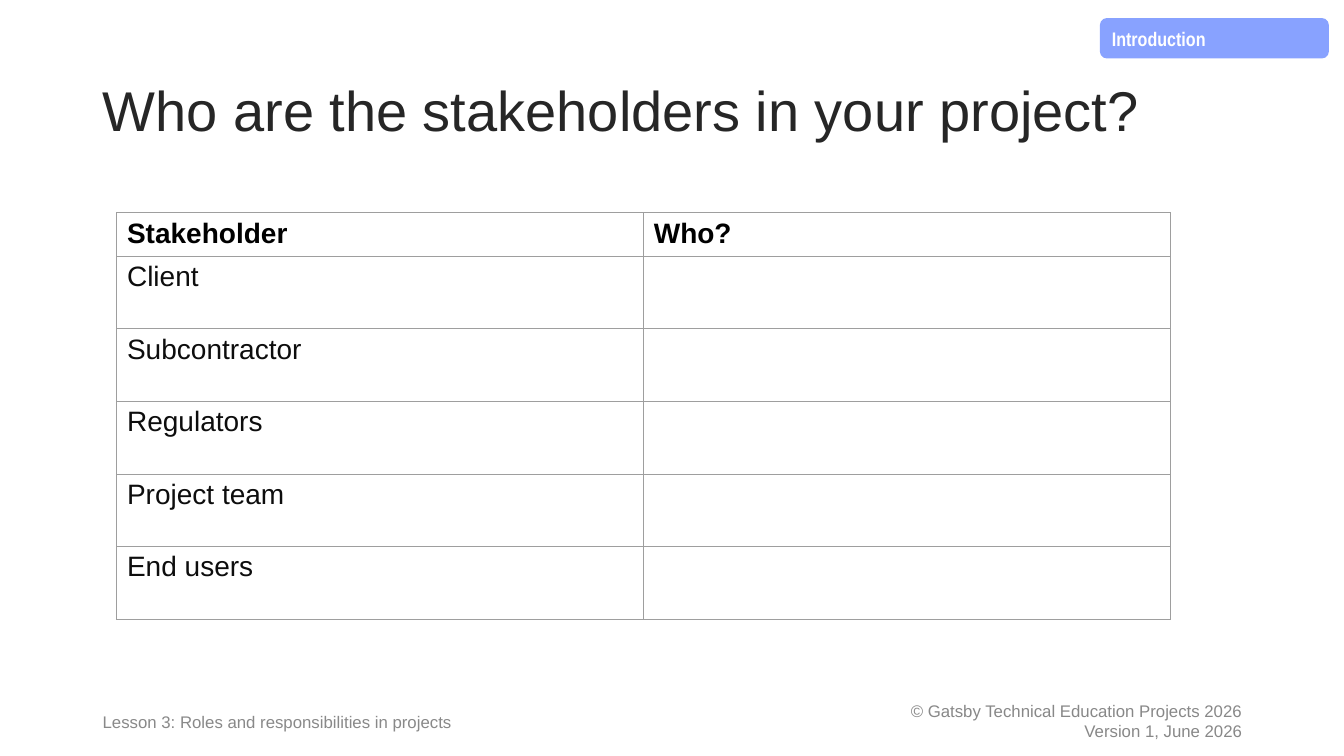
from lxml.etree import SubElement
from pptx import Presentation
from pptx.dml.color import RGBColor
from pptx.enum.shapes import MSO_SHAPE
from pptx.enum.text import MSO_ANCHOR, PP_ALIGN
from pptx.oxml.ns import qn
from pptx.util import Inches, Pt

COLORS = {
    "title": "262626",
    "head": "000000",
    "body": "0D0D0D",
    "rule": "9E9E9E",
    "tag": "88A2FF",
    "white": "FFFFFF",
    "legal": "888888",
    "lesson": "898989",
}
PEOPLE = ["Client", "Subcontractor", "Regulators", "Project team", "End users"]


def color(name):
    return RGBColor.from_string(COLORS[name])


def write(frame, lines, size, tint, bold=False, font="Arial",
          align=PP_ALIGN.LEFT, space=1.0):
    for i, line in enumerate(lines):
        para = frame.add_paragraph() if i else frame.paragraphs[0]
        para.alignment = align
        para.line_spacing = space
        run = para.add_run()
        run.text = line
        run.font.name = font
        run.font.size = Pt(size)
        run.font.bold = bold
        run.font.color.rgb = color(tint)


def add_text(slide, box, lines, size, tint, **style):
    frame = slide.shapes.add_textbox(*map(Inches, box)).text_frame
    frame.word_wrap = True
    frame.vertical_anchor = MSO_ANCHOR.MIDDLE
    write(frame, lines, size, tint, **style)


def add_tag(slide, box, label):
    tag = slide.shapes.add_shape(
        MSO_SHAPE.FLOWCHART_ALTERNATE_PROCESS, *map(Inches, box))
    tag.shadow.inherit = False
    tag.fill.solid()
    tag.fill.fore_color.rgb = color("tag")
    tag.line.fill.background()
    frame = tag.text_frame
    frame.vertical_anchor = MSO_ANCHOR.TOP
    write(frame, [label], 14, "white", bold=True, font="Arial Narrow", space=1.08)


def add_rules(cell):
    props = cell._tc.get_or_add_tcPr()
    for side in ("lnL", "lnR", "lnT", "lnB"):
        line = SubElement(props, qn(f"a:{side}"), w=str(Pt(0.75)))
        fill = SubElement(line, qn("a:solidFill"))
        SubElement(fill, qn("a:srgbClr"), val=COLORS["rule"])


def add_grid(slide, left, top, width, heads, names):
    rows = [heads] + [[name, ""] for name in names]
    tall = [0.42] + [0.72] * len(names)
    box = map(Inches, (left, top, width, sum(tall)))
    grid = slide.shapes.add_table(len(rows), len(heads), *box).table
    grid.first_row = True
    grid.horz_banding = False
    for i, row in enumerate(rows):
        grid.rows[i].height = Inches(tall[i])
        for j, text in enumerate(row):
            cell = grid.cell(i, j)
            add_rules(cell)
            cell.fill.background()
            if text:
                tint = "body" if i else "head"
                write(cell.text_frame, [text], 20, tint, bold=i == 0)


def main():
    deck = Presentation()
    deck.slide_width = Inches(13.33)
    deck.slide_height = Inches(7.5)
    slide = deck.slides.add_slide(deck.slide_layouts[6])
    add_text(slide, (7.92, 6.95, 4.5, 0.4),
             ["© Gatsby Technical Education Projects 2026",
              "Version 1, June 2026"],
             12, "legal", align=PP_ALIGN.RIGHT)
    add_text(slide, (0.92, 0.4, 11.5, 1.45),
             ["Who are the stakeholders in your project?"],
             40, "title", space=0.9)
    add_grid(slide, 1.16, 2.11, 10.45, ["Stakeholder", "Who?"], PEOPLE)
    add_tag(slide, (10.91, 0.18, 2.27, 0.4), "Introduction")
    add_text(slide, (0.92, 6.95, 4.6, 0.4),
             ["Lesson 3: Roles and responsibilities in projects"],
             12, "lesson", space=1.08)
    deck.save("out.pptx")


if __name__ == "__main__":
    main()
